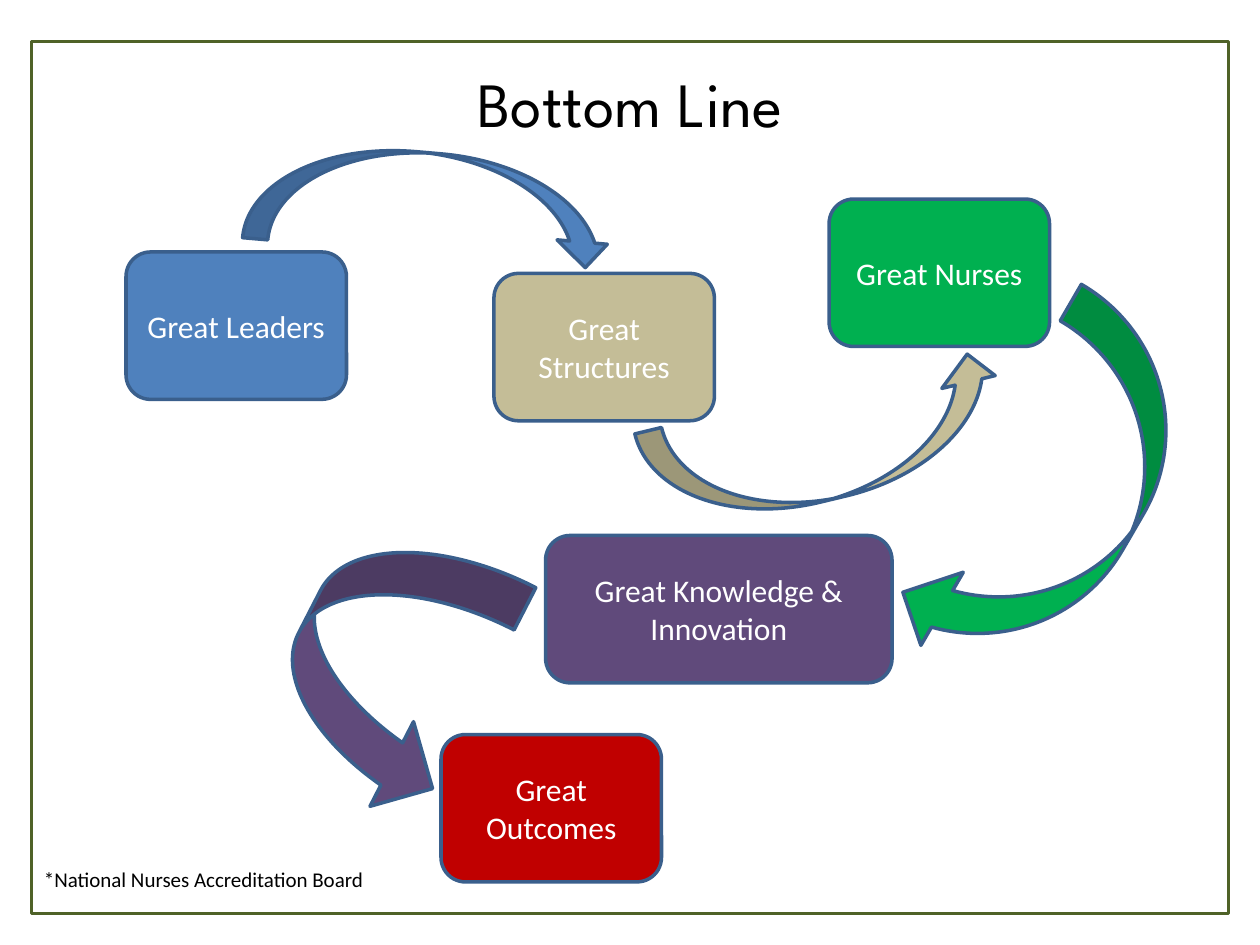
from pptx import Presentation
from pptx.dml.color import RGBColor
from pptx.enum.shapes import MSO_SHAPE
from pptx.enum.text import MSO_ANCHOR, MSO_AUTO_SIZE, PP_ALIGN
from pptx.util import Inches, Pt

ROUNDED = MSO_SHAPE.ROUNDED_RECTANGLE
RECTANGLE = MSO_SHAPE.RECTANGLE
CURVED_ARROW = MSO_SHAPE.CURVED_LEFT_ARROW
CENTER, LEFT = PP_ALIGN.CENTER, PP_ALIGN.LEFT
MIDDLE, TOP = MSO_ANCHOR.MIDDLE, MSO_ANCHOR.TOP
FIT_SHAPE = MSO_AUTO_SIZE.SHAPE_TO_FIT_TEXT

BLACK = RGBColor(0x00, 0x00, 0x00)
WHITE = RGBColor(0xFF, 0xFF, 0xFF)
BLUE = RGBColor(0x4F, 0x81, 0xBD)
TAN = RGBColor(0xC4, 0xBD, 0x97)
GREEN = RGBColor(0x00, 0xB0, 0x50)
PURPLE = RGBColor(0x60, 0x4A, 0x7B)
RED = RGBColor(0xC0, 0x00, 0x00)
OUTLINE = RGBColor(0x3A, 0x5F, 0x8C)
FRAME_GREEN = RGBColor(0x4F, 0x62, 0x28)

STEP_HEIGHT = 1.17
# Label, colour, left, top, width
STEPS = [
    ("Great Leaders", BLUE, 1, 2, 1.75),
    ("Great Structures", TAN, 3.92, 2.17, 1.75),
    ("Great Nurses", GREEN, 6.58, 1.58, 1.75),
    ("Great Knowledge & Innovation", PURPLE, 4.33, 4.25, 2.75),
    ("Great Outcomes", RED, 3.5, 5.83, 1.75),
]
# Colour, box before rotation, rotation, flip attribute
ARROWS = [
    (BLUE, (3.02, 0.15, 0.8, 2.93), 275, None),
    (TAN, (6.13, 2.06, 0.87, 2.93), 256.5, "flipH"),
    (GREEN, (7.7, 2.38, 1.34, 3.16), 30.1, None),
    (PURPLE, (2.33, 4.2, 1.51, 2.17), 207.2, "flipV"),
]


def write(shape, text, size, color, align, anchor, font="Calibri"):
    frame = shape.text_frame
    frame.text = text
    frame.word_wrap = True
    frame.vertical_anchor = anchor
    para = frame.paragraphs[0]
    para.alignment = align
    span = para.runs[0]
    span.font.name = font
    span.font.size = Pt(size)
    span.font.color.rgb = color


def add_outlined(page, kind, box, fill, line):
    shape = page.shapes.add_shape(kind, *map(Inches, box))
    shape.shadow.inherit = False
    if fill is None:
        shape.fill.background()
    else:
        shape.fill.solid()
        shape.fill.fore_color.rgb = fill
    shape.line.color.rgb = line
    shape.line.width = Pt(2)
    return shape


def add_title(page, box):
    title = page.shapes.add_textbox(*map(Inches, box))
    write(title, "Bottom Line", 36, BLACK, CENTER, MIDDLE, "League Spartan")


def add_step(page, box, label, color):
    step = add_outlined(page, ROUNDED, box, color, OUTLINE)
    write(step, label, 18, WHITE, CENTER, MIDDLE)


def add_arrow(page, box, color, rotation, flip):
    arrow = add_outlined(page, CURVED_ARROW, box, color, OUTLINE)
    arrow.rotation = rotation
    if flip:
        arrow.element.spPr.xfrm.set(flip, "1")


def add_footnote(page, box):
    note = page.shapes.add_textbox(*map(Inches, box))
    write(note, "*National Nurses Accreditation Board", 12, BLACK, LEFT, TOP)
    note.text_frame.word_wrap = False
    note.text_frame.auto_size = FIT_SHAPE


def main():
    deck = Presentation()
    deck.slide_width, deck.slide_height = Inches(10), Inches(7.5)
    page = deck.slides.add_slide(deck.slide_layouts[6])

    add_title(page, (0.5, 0.3, 9, 1.03))
    # Chain of steps and the arrows between them
    for label, color, left, top, width in STEPS:
        add_step(page, (left, top, width, STEP_HEIGHT), label, color)
    for color, box, rotation, flip in ARROWS:
        add_arrow(page, box, color, rotation, flip)
    add_footnote(page, (0.25, 6.83, 3.14, 0.3))
    # Border around the slide
    add_outlined(page, RECTANGLE, (0.25, 0.33, 9.5, 6.92), None, FRAME_GREEN)

    deck.save("out.pptx")


if __name__ == "__main__":
    main()
